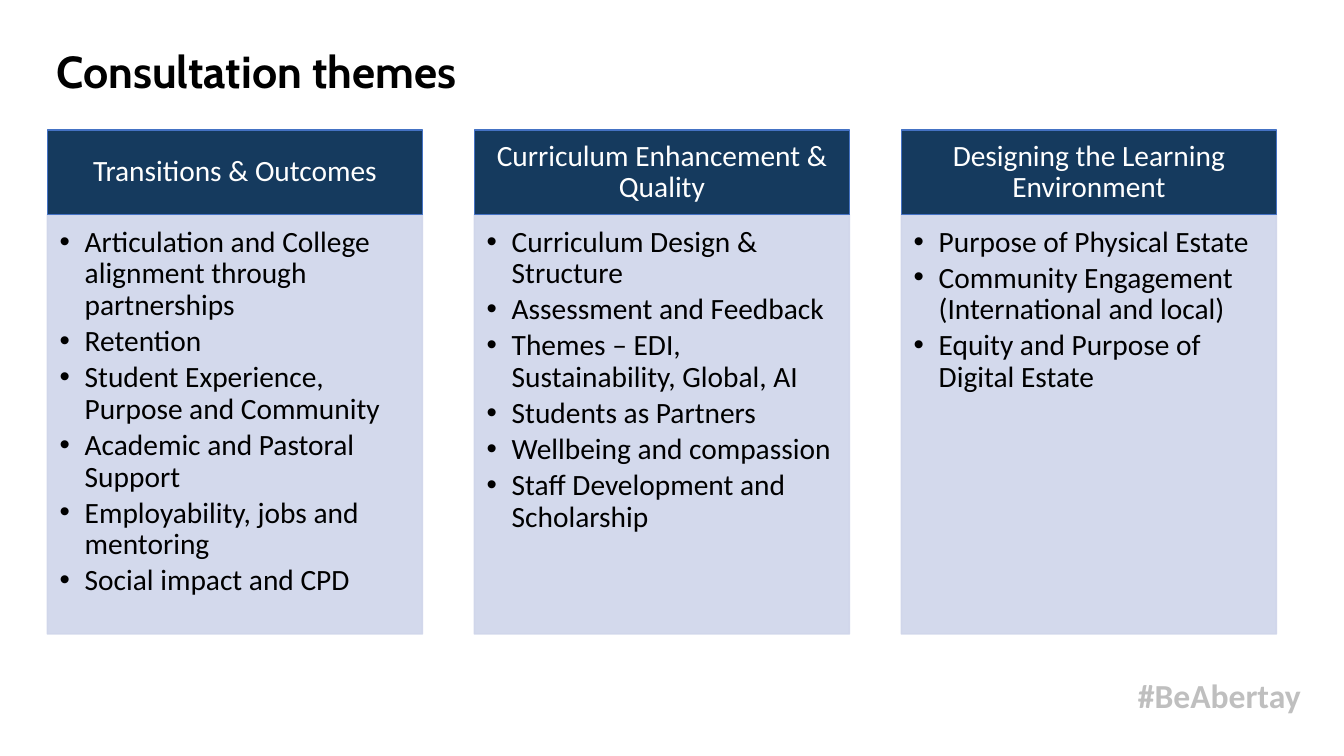
from lxml.etree import SubElement
from pptx import Presentation
from pptx.dml.color import RGBColor
from pptx.enum.shapes import MSO_SHAPE as Shape
from pptx.enum.text import MSO_ANCHOR as Anchor, MSO_AUTO_SIZE as AutoSize, PP_ALIGN as Align
from pptx.oxml.ns import qn
from pptx.util import Inches, Pt

THEMES = [
    ("Transitions & Outcomes", [
        "Articulation and College alignment through partnerships",
        "Retention",
        "Student Experience, Purpose and Community",
        "Academic and Pastoral Support",
        "Employability, jobs and mentoring",
        "Social impact and CPD",
    ]),
    ("Curriculum Enhancement & Quality", [
        "Curriculum Design & Structure",
        "Assessment and Feedback",
        "Themes – EDI, Sustainability, Global, AI",
        "Students as Partners",
        "Wellbeing and compassion",
        "Staff Development and Scholarship",
    ]),
    ("Designing the Learning Environment", [
        "Purpose of Physical Estate",
        "Community Engagement (International and local)",
        "Equity and Purpose of Digital Estate",
    ]),
]
LEFT, TOP, WIDTH = 0.47, 1.29, 3.72
PITCH = (8.94 - LEFT) / 2
HEADING_HEIGHT, LIST_HEIGHT = 0.84, 4.16


def color(code):
    return RGBColor.from_string(code)


def set_opacity(fill_parent, percent):
    rgb = fill_parent.find(qn("a:solidFill")).find(qn("a:srgbClr"))
    SubElement(rgb, qn("a:alpha")).set("val", str(percent * 1000))


def add_bullet(para, indent):
    """Give the paragraph a round bullet with a hanging indent."""
    properties = para._p.get_or_add_pPr()
    properties.set("marL", str(Inches(indent)))
    properties.set("indent", str(-Inches(indent)))
    SubElement(properties, qn("a:buFont")).set("typeface", "Arial")
    SubElement(properties, qn("a:buChar")).set("char", "•")


class ThemeSlide:
    heading_font, body_font = "Cabin", "Calibri"
    text_size = 21
    black, white, grey = "000000", "FFFFFF", "BFBFBF"
    navy, blue, lavender = "153A5E", "4472C4", "CFD5EA"

    def __init__(self, page):
        self.page = page

    def place(self, box, left, top, width, height):
        box.left, box.top = Inches(left), Inches(top)
        box.width, box.height = Inches(width), Inches(height)

    def paint(self, box, fill, line):
        box.fill.solid()
        box.fill.fore_color.rgb = color(fill)
        box.line.color.rgb = color(line)
        box.line.width = Pt(1)

    def set_frame(self, box, anchor, insets=(0.1, 0.05, 0.1, 0.05)):
        frame = box.text_frame
        frame.word_wrap = True
        frame.auto_size = AutoSize.NONE
        frame.vertical_anchor = anchor
        (frame.margin_left, frame.margin_top,
         frame.margin_right, frame.margin_bottom) = map(Inches, insets)
        return frame

    def style(self, para, size, code, font, bold=False, align=Align.LEFT, spacing=0.9):
        para.alignment = align
        para.line_spacing = spacing
        para.space_before = Pt(0)
        for span in para.runs:
            span.font.name = font
            span.font.size = Pt(size)
            span.font.bold = bold
            span.font.color.rgb = color(code)

    def title(self, text):
        box = self.page.shapes.title
        self.place(box, 0.46, 0.43, 10.96, 0.6)
        frame = self.set_frame(box, Anchor.MIDDLE)
        frame.text = text
        self.style(frame.paragraphs[0], 32, self.black, self.heading_font, bold=True)

    def heading(self, text, left):
        box = self.page.shapes.add_shape(Shape.RECTANGLE, 0, 0, 0, 0)
        self.place(box, left, TOP, WIDTH, HEADING_HEIGHT)
        box.shadow.inherit = False
        self.paint(box, self.navy, self.blue)
        frame = self.set_frame(box, Anchor.MIDDLE, (0.16, 0.09, 0.16, 0.09))
        frame.text = text
        self.style(frame.paragraphs[0], self.text_size, self.white, self.body_font,
                   align=Align.CENTER)

    def bullet_list(self, box, items, left):
        self.place(box, left, TOP + HEADING_HEIGHT, WIDTH, LIST_HEIGHT)
        self.paint(box, self.lavender, self.lavender)
        set_opacity(box._element.spPr, 90)
        set_opacity(box._element.spPr.find(qn("a:ln")), 90)
        frame = self.set_frame(box, Anchor.TOP, (0.12, 0.12, 0.16, 0.18))
        frame.text = "\n".join(items)
        for para in frame.paragraphs:
            add_bullet(para, 0.25)
            self.style(para, self.text_size, self.black, self.body_font)
            para.space_after = Pt(3)

    def hashtag(self, text):
        box = self.page.shapes.add_textbox(0, 0, 0, 0)
        self.place(box, 11.02, 6.65, 1.98, 0.51)
        frame = self.set_frame(box, Anchor.TOP)
        frame.text = text
        self.style(frame.paragraphs[0], 24, self.grey, self.body_font, bold=True,
                   align=Align.RIGHT, spacing=1.0)


def main():
    deck = Presentation()
    deck.slide_width, deck.slide_height = Inches(13.33), Inches(7.5)
    page = deck.slides.add_slide(deck.slide_layouts.get_by_name("Comparison"))
    slide = ThemeSlide(page)
    slide.title("Consultation themes")
    bodies = list(page.placeholders)[1:]
    for column, (heading, items) in enumerate(THEMES):
        left = LEFT + column * PITCH
        slide.heading(heading, left)
        slide.bullet_list(bodies[column], items, left)
    for unused in bodies[len(THEMES):]:
        unused._element.getparent().remove(unused._element)
    slide.hashtag("#BeAbertay")
    deck.save("out.pptx")


if __name__ == "__main__":
    main()
